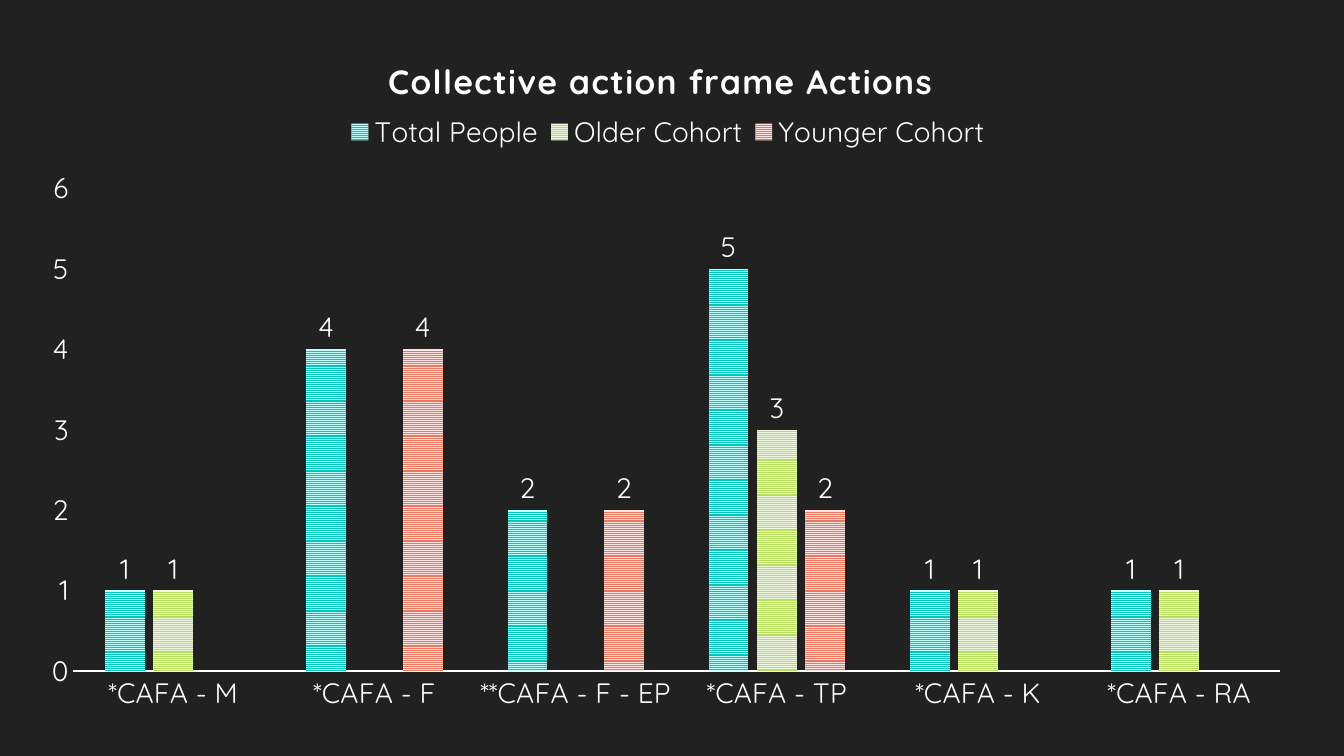
from lxml import etree
from pptx import Presentation
from pptx.chart.data import CategoryChartData
from pptx.dml.color import RGBColor
from pptx.enum.chart import (XL_CHART_TYPE as ChartType, XL_LABEL_POSITION as LabelPos,
                             XL_LEGEND_POSITION as LegendPos, XL_TICK_MARK as Tick)
from pptx.enum.dml import MSO_PATTERN as Pattern
from pptx.oxml.ns import qn
from pptx.util import Cm, Pt

FONT = "Quicksand"
WHITE = "FFFFFF"
CATEGORIES = ["*CAFA - M", "*CAFA - F", "**CAFA - F - EP",
              "*CAFA - TP", "*CAFA - K", "*CAFA - RA"]
# name, values, stripe colour, ground colour
COHORTS = [
    ("Total People", (1, 4, 2, 5, 1, 1), "00C6BB", "C1FFFC"),
    ("Older Cohort", (1, None, None, 3, 1, 1), "B6DF5E", "F0F9DF"),
    ("Younger Cohort", (None, 4, 2, 2, None, None), "EF755F", "FCE3DF"),
]


def rgb(value):
    return RGBColor.from_string(value)


def style_font(font, size=20, bold=False):
    font.name = FONT
    font.size = Pt(size)
    font.bold = bold
    font.color.rgb = rgb(WHITE)


def place(element, index, inner=False, **fractions):
    """Give a chart part a manual layout, in fractions of the chart."""
    for old in element.findall(qn("c:layout")):
        element.remove(old)
    layout = etree.Element(qn("c:layout"))
    manual = etree.SubElement(layout, qn("c:manualLayout"))
    if inner:
        etree.SubElement(manual, qn("c:layoutTarget")).set("val", "inner")
    for mode in ("xMode", "yMode"):
        etree.SubElement(manual, qn(f"c:{mode}")).set("val", "edge")
    for key, value in fractions.items():
        etree.SubElement(manual, qn(f"c:{key}")).set("val", str(value))
    element.insert(index, layout)


def add_cohort_chart(slide):
    data = CategoryChartData()
    data.categories = CATEGORIES
    for name, values, _, _ in COHORTS:
        data.add_series(name, values)
    chart = slide.shapes.add_chart(ChartType.COLUMN_CLUSTERED, Cm(0.64), Cm(0.48),
                                   Cm(32.23), Cm(17.78), data).chart
    style_font(chart.font)
    place(chart.element.find(".//" + qn("c:plotArea")), 0, inner=True,
          x=0.037, y=0.24, w=0.944, h=0.684)
    return chart


def style_title(chart, text):
    title = chart.chart_title
    r = title.text_frame.paragraphs[0].add_run()
    r.text = text
    style_font(r.font, 24, bold=True)
    r.font._element.set("spc", "100")
    title.include_in_layout = False
    place(title._element, 1, x=0.279, y=0.045)


def style_legend(chart):
    chart.has_legend = True
    legend = chart.legend
    legend.position = LegendPos.TOP
    legend.include_in_layout = False
    style_font(legend.font)
    place(legend._element, 1, x=0.245, y=0.13, w=0.515, h=0.06)


def style_axes(chart):
    for axis in (chart.category_axis, chart.value_axis):
        axis.major_tick_mark = axis.minor_tick_mark = Tick.NONE
        axis.has_major_gridlines = False
        style_font(axis.tick_labels.font)
    line = chart.category_axis.format.line
    line.color.rgb = rgb(WHITE)
    line.width = Pt(1.5)
    values = chart.value_axis
    values.format.line.fill.background()
    values.minimum_scale, values.maximum_scale, values.major_unit = 0, 6, 1


def style_columns(chart):
    plot = chart.plots[0]
    plot.gap_width, plot.overlap = 164, -22
    plot.vary_by_categories = False
    for series, (_, _, stripe, ground) in zip(plot.series, COHORTS):
        series.invert_if_negative = False
        fill = series.format.fill
        fill.patterned()
        fill.pattern = Pattern.NARROW_HORIZONTAL
        fill.fore_color.rgb = rgb(stripe)
        fill.back_color.rgb = rgb(ground)
        series.format.line.fill.background()
        labels = series.data_labels
        labels.show_value = True
        labels.position = LabelPos.OUTSIDE_END
        style_font(labels.font)


def main():
    prs = Presentation()
    prs.slide_width, prs.slide_height = Cm(33.87), Cm(19.05)
    s = prs.slides.add_slide(prs.slide_layouts[6])
    s.background.fill.solid()
    s.background.fill.fore_color.rgb = rgb("212121")

    # Chart with its title, legend, axes and columns
    chart = add_cohort_chart(s)
    style_title(chart, "Collective action frame Actions")
    style_legend(chart)
    style_axes(chart)
    style_columns(chart)

    prs.save("out.pptx")


if __name__ == "__main__":
    main()
